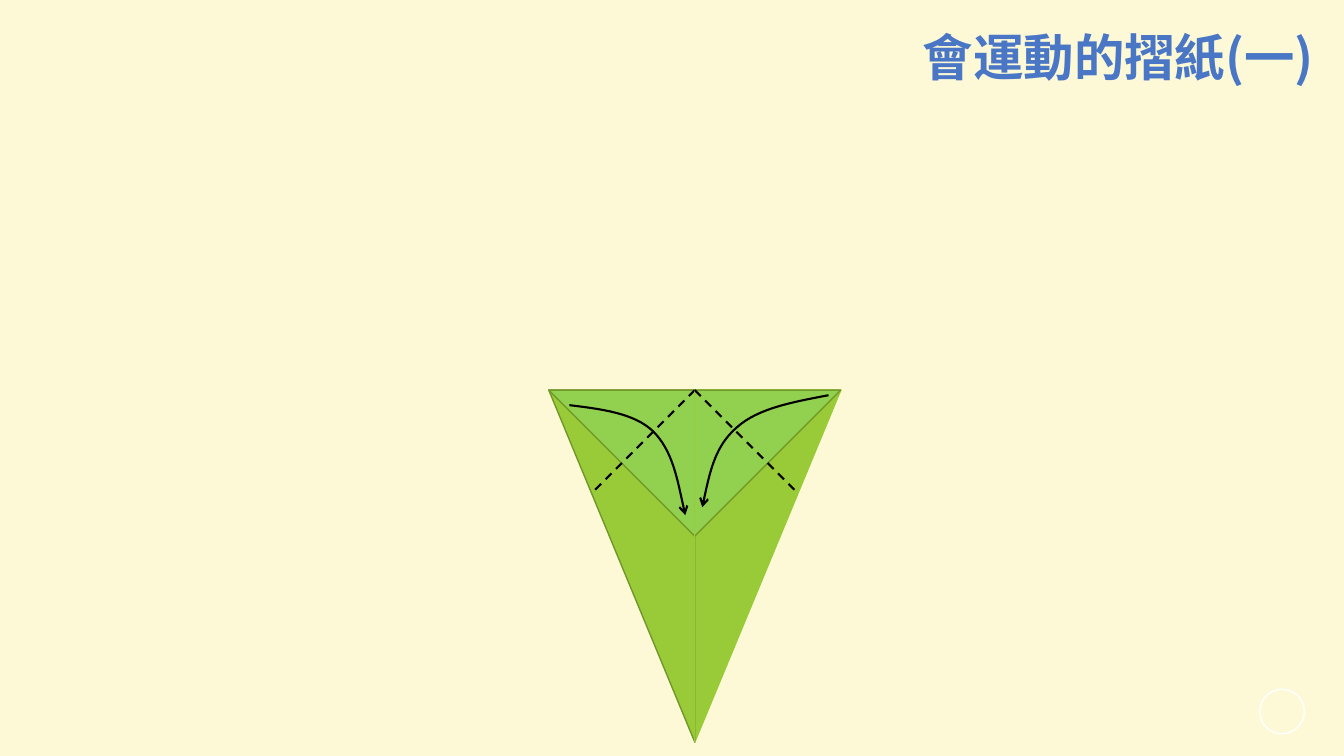
from dataclasses import dataclass
from typing import Optional

from lxml import etree
from pptx import Presentation
from pptx.dml.color import RGBColor
from pptx.enum.dml import MSO_LINE
from pptx.enum.shapes import MSO_CONNECTOR, MSO_SHAPE
from pptx.oxml.ns import qn
from pptx.util import Cm, Pt

STRAIGHT = MSO_CONNECTOR.STRAIGHT
OVAL = MSO_SHAPE.OVAL
DASH = MSO_LINE.DASH

FONT = "Noto Sans CJK SC"
CREAM, WHITE, BLACK, BLUE = "FDF9D7", "FFFFFF", "000000", "4A76C6"
LEAF, LEAF_EDGE = "99CB38", "719629"
FLAP, FLAP_EDGE = "92D050", "739A28"

# Paper geometry in centimetres: the flap is a right-angled triangle
CENTRE, TOP = 17.51, 9.83
HALF_WIDTH, HEIGHT, FOLD = 3.68, 8.87, 2.59
Point = tuple[float, float]
TOP_MIDDLE: Point = (CENTRE, TOP)
LEFT_CORNER: Point = (CENTRE - HALF_WIDTH, TOP)
RIGHT_CORNER: Point = (CENTRE + HALF_WIDTH, TOP)
FLAP_TIP: Point = (CENTRE, TOP + HALF_WIDTH)
BOTTOM_TIP: Point = (CENTRE, TOP + HEIGHT)


@dataclass(frozen=True)
class Panel:
    corners: tuple[Point, ...]
    fill: str
    edge: str


@dataclass(frozen=True)
class Crease:
    start: Point
    end: Point
    color: str = LEAF
    width: float = 0.5
    dash: Optional[MSO_LINE] = None


@dataclass(frozen=True)
class FoldArrow:
    points: tuple[Point, ...]  # start, then three points per curve segment


PAPER = (
    Panel((TOP_MIDDLE, BOTTOM_TIP, RIGHT_CORNER), LEAF, LEAF),
    Panel((TOP_MIDDLE, BOTTOM_TIP, LEFT_CORNER), LEAF, LEAF_EDGE),
    Crease(LEFT_CORNER, FLAP_TIP),
    Crease(RIGHT_CORNER, FLAP_TIP),
    Panel((LEFT_CORNER, RIGHT_CORNER, FLAP_TIP), FLAP, FLAP_EDGE),
    Crease(TOP_MIDDLE, (CENTRE - FOLD, TOP + FOLD), BLACK, 1.5, DASH),
    Crease(TOP_MIDDLE, BOTTOM_TIP),
    Crease(TOP_MIDDLE, (CENTRE + FOLD, TOP + FOLD), BLACK, 1.5, DASH),
    FoldArrow(((14.35, 10.21), (15.16, 10.31), (15.98, 10.41), (16.46, 10.87),
               (16.94, 11.35), (17.09, 12.17), (17.27, 12.98))),
    FoldArrow(((20.88, 9.96), (19.99, 10.13), (19.1, 10.29), (18.57, 10.77),
               (18.03, 11.23), (17.86, 12.01), (17.7, 12.78))),
)


def rgb(color: str) -> RGBColor:
    return RGBColor.from_string(color)


def set_line(line, color: str, width: float) -> None:
    line.color.rgb = rgb(color)
    line.width = Pt(width)


def add_outline(slide, points: tuple[Point, ...], close: bool):
    start, *rest = [(Cm(x), Cm(y)) for x, y in points]
    builder = slide.shapes.build_freeform(*start)
    builder.add_line_segments(rest, close=close)
    outline = builder.convert_to_shape()
    outline.shadow.inherit = False
    return outline


def draw_panel(slide, panel: Panel) -> None:
    face = add_outline(slide, panel.corners, close=True)
    face.fill.solid()
    face.fill.fore_color.rgb = rgb(panel.fill)
    set_line(face.line, panel.edge, 1)


def draw_crease(slide, crease: Crease) -> None:
    ends = [Cm(value) for value in crease.start + crease.end]
    fold = slide.shapes.add_connector(STRAIGHT, *ends)
    set_line(fold.line, crease.color, crease.width)
    if crease.dash is not None:
        fold.line.dash_style = crease.dash
    etree.SubElement(fold._element.spPr, qn("a:effectLst"))


def draw_fold_arrow(slide, arrow: FoldArrow) -> None:
    curve = add_outline(slide, arrow.points, close=False)
    curve.fill.background()
    set_line(curve.line, BLACK, 1.5)
    # Turn each run of three straight segments into one Bézier segment
    segments = list(curve._element.iter(qn("a:lnTo")))
    for first in range(0, len(segments), 3):
        bezier = etree.Element(qn("a:cubicBezTo"))
        segments[first].addprevious(bezier)
        for segment in segments[first:first + 3]:
            bezier.append(segment[0])
            segment.getparent().remove(segment)
    outline = curve._element.spPr.find(qn("a:ln"))
    etree.SubElement(outline, qn("a:tailEnd"), type="arrow")


def add_text(slide, text: str, *, left: float, top: float, width: float,
             height: float, size: float, color: str, bold: bool) -> None:
    box = slide.shapes.add_textbox(Cm(left), Cm(top), Cm(width), Cm(height))
    box.text_frame.word_wrap = True
    run = box.text_frame.paragraphs[0].add_run()
    run.text = text
    run.font.size = Pt(size)
    run.font.bold = bold
    run.font.name = FONT
    run.font.color.rgb = rgb(color)
    etree.SubElement(run.font._element, qn("a:ea"), typeface=FONT)


def draw_corner_ring(slide) -> None:
    ring = slide.shapes.add_shape(OVAL, Cm(31.75), Cm(17.37), Cm(1.12), Cm(1.12))
    ring.shadow.inherit = False
    ring.fill.background()
    set_line(ring.line, WHITE, 1)


def main() -> None:
    deck = Presentation()
    deck.slide_width, deck.slide_height = Cm(33.87), Cm(19.05)
    slide = deck.slides.add_slide(deck.slide_layouts[6])
    slide.background.fill.solid()
    slide.background.fill.fore_color.rgb = rgb(CREAM)

    # Corner ring and title
    draw_corner_ring(slide)
    add_text(slide, "會運動的摺紙(一)", left=23.01, top=0.53, width=10.39,
             height=1.8, size=36, color=BLUE, bold=True)

    # Folded paper, from back to front
    painters = {Panel: draw_panel, Crease: draw_crease, FoldArrow: draw_fold_arrow}
    for part in PAPER:
        painters[type(part)](slide, part)

    deck.save("out.pptx")


if __name__ == "__main__":
    main()
